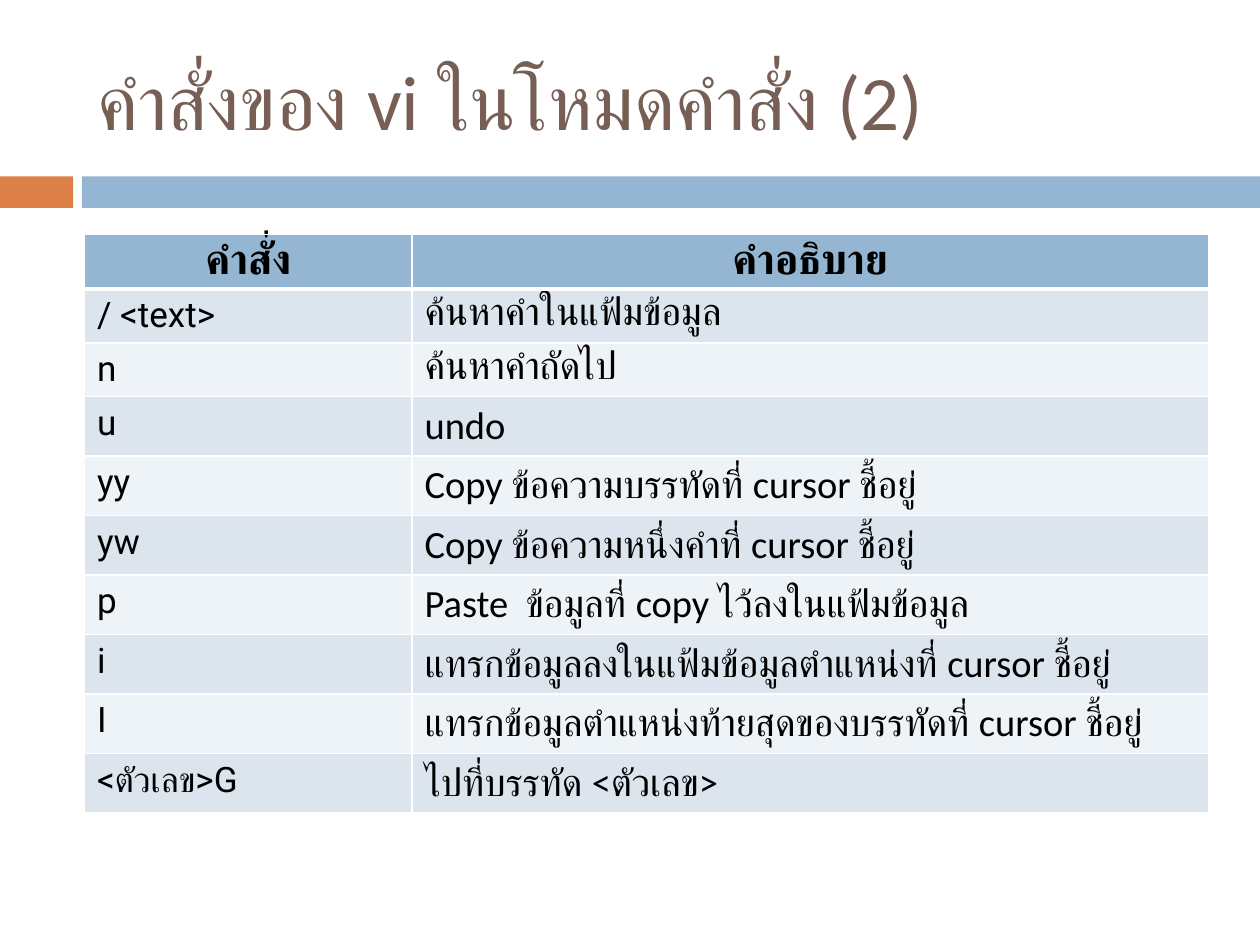
from typing import NamedTuple

from lxml.etree import SubElement
from pptx import Presentation
from pptx.dml.color import RGBColor
from pptx.enum.shapes import MSO_SHAPE
from pptx.enum.text import MSO_ANCHOR, MSO_AUTO_SIZE, PP_ALIGN
from pptx.oxml.ns import qn
from pptx.util import Inches, Pt

# Colours and fonts
BLACK = RGBColor(0x00, 0x00, 0x00)
WHITE = RGBColor(0xFF, 0xFF, 0xFF)
BROWN = RGBColor(0x77, 0x5F, 0x55)
ORANGE = RGBColor(0xDD, 0x80, 0x47)
BLUE = RGBColor(0x94, 0xB6, 0xD2)
BAND_COLORS = (RGBColor(0xDC, 0xE5, 0xEE), RGBColor(0xEE, 0xF3, 0xF7))
TEXT_FONT = "Calibri"
KEY_FONT = "Roboto"


class Bar(NamedTuple):
    left: float
    width: float
    color: RGBColor


class TextStyle(NamedTuple):
    font: str
    size: int
    color: RGBColor = BLACK
    bold: bool = False
    align: PP_ALIGN = PP_ALIGN.LEFT


class Command(NamedTuple):
    key: str
    description: str


TITLE_STYLE = TextStyle(TEXT_FONT, 44, BROWN)
HEADER_STYLE = TextStyle(TEXT_FONT, 24, bold=True, align=PP_ALIGN.CENTER)
KEY_STYLE = TextStyle(KEY_FONT, 20)
DESCRIPTION_STYLE = TextStyle(TEXT_FONT, 22)

BARS = (Bar(0, 0.58, ORANGE), Bar(0.65, 9.35, BLUE))
COLUMN_WIDTHS = (2.6, 6.32)
ROW_HEIGHT = 0.41
HEADER = Command("คำสั่ง", "คำอธิบาย")
COMMANDS = (
    Command("/ <text>", "ค้นหาคำในแฟ้มข้อมูล"),
    Command("n", "ค้นหาคำถัดไป"),
    Command("u", "undo"),
    Command("yy", "Copy ข้อความบรรทัดที่ cursor ชี้อยู่"),
    Command("yw", "Copy ข้อความหนึ่งคำที่ cursor ชี้อยู่"),
    Command("p", "Paste  ข้อมูลที่ copy ไว้ลงในแฟ้มข้อมูล"),
    Command("i", "แทรกข้อมูลลงในแฟ้มข้อมูลตำแหน่งที่ cursor ชี้อยู่"),
    Command("I", "แทรกข้อมูลตำแหน่งท้ายสุดของบรรทัดที่ cursor ชี้อยู่"),
    Command("<ตัวเลข>G", "ไปที่บรรทัด <ตัวเลข>"),
)


def write_text(text_frame, text: str, style: TextStyle) -> None:
    paragraph = text_frame.paragraphs[0]
    paragraph.alignment = style.align
    run = paragraph.add_run()
    run.text = text
    run.font.name = style.font
    run.font.size = Pt(style.size)
    run.font.bold = style.bold
    run.font.color.rgb = style.color


def draw_bar(slide, bar: Bar) -> None:
    shape = slide.shapes.add_shape(
        MSO_SHAPE.RECTANGLE, Inches(bar.left), Inches(1.4), Inches(bar.width), Inches(0.25)
    )
    shape.shadow.inherit = False
    shape.fill.solid()
    shape.fill.fore_color.rgb = bar.color
    shape.line.fill.background()


def set_borders(cell, top: float, bottom: float) -> None:
    properties = cell._tc.get_or_add_tcPr()
    for side, width in (("L", 1), ("R", 1), ("T", top), ("B", bottom)):
        line = SubElement(properties, qn(f"a:ln{side}"), w=str(Pt(width)))
        fill = SubElement(line, qn("a:solidFill"))
        SubElement(fill, qn("a:srgbClr"), val=str(WHITE))


def draw_table(slide) -> None:
    rows = (HEADER, *COMMANDS)
    table = slide.shapes.add_table(
        len(rows), len(COLUMN_WIDTHS), Inches(0.67), Inches(1.86),
        Inches(sum(COLUMN_WIDTHS)), Inches(ROW_HEIGHT * len(rows)),
    ).table
    for column, width in zip(table.columns, COLUMN_WIDTHS):
        column.width = Inches(width)
    for index, command in enumerate(rows):
        table.rows[index].height = Inches(ROW_HEIGHT)
        is_header = index == 0
        styles = (HEADER_STYLE,) * 2 if is_header else (KEY_STYLE, DESCRIPTION_STYLE)
        for cell, text, style in zip(table.rows[index].cells, command, styles):
            # The header is parted from the body by a thicker line
            set_borders(cell, top=3 if index == 1 else 1, bottom=3 if is_header else 1)
            cell.fill.solid()
            cell.fill.fore_color.rgb = BLUE if is_header else BAND_COLORS[(index - 1) % 2]
            write_text(cell.text_frame, text, style)


def main() -> None:
    presentation = Presentation()
    presentation.slide_width, presentation.slide_height = Inches(10), Inches(7.5)
    slide = presentation.slides.add_slide(presentation.slide_layouts[5])

    # Title
    title = slide.shapes.title
    title.left, title.top = Inches(0.67), Inches(0.25)
    title.width, title.height = Inches(8.92), Inches(1.08)
    title.text_frame.vertical_anchor = MSO_ANCHOR.MIDDLE
    title.text_frame.auto_size = MSO_AUTO_SIZE.NONE
    write_text(title.text_frame, "คำสั่งของ vi ในโหมดคำสั่ง (2)", TITLE_STYLE)

    # Bars under the title
    for bar in BARS:
        draw_bar(slide, bar)

    # Command table
    draw_table(slide)

    presentation.save("out.pptx")


if __name__ == "__main__":
    main()
